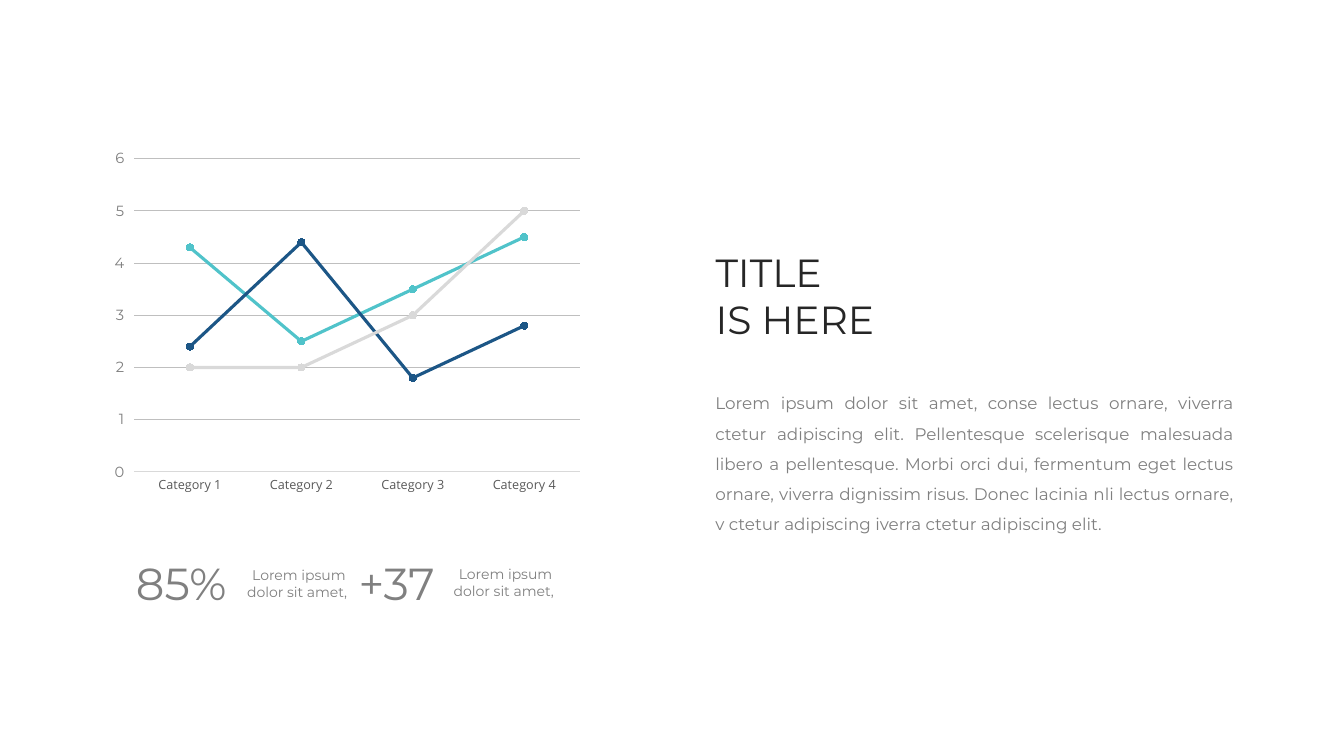
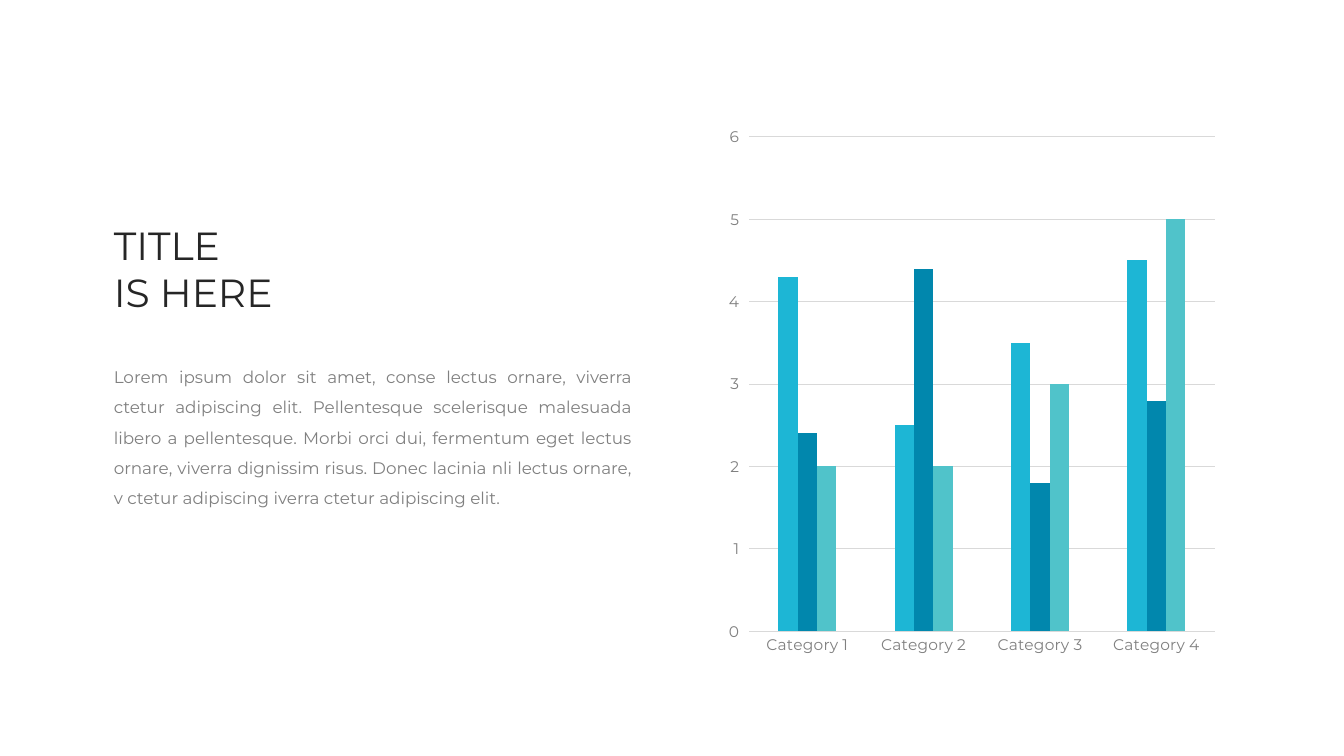
from pptx import Presentation
from pptx.chart.data import CategoryChartData
from pptx.dml.color import RGBColor
from pptx.enum import chart as ch, text as tx
from pptx.util import Pt

# Shared look
HEADING_FONT, CHART_FONT = "Montserrat", "Open Sans"
INK = RGBColor(0x26, 0x26, 0x26)
GREY = RGBColor(0x80, 0x80, 0x80)
DARK_GREY = RGBColor(0x59, 0x59, 0x59)
MID_GREY = RGBColor(0xBF, 0xBF, 0xBF)
PALE_GREY = RGBColor(0xD9, 0xD9, 0xD9)
BLACK = RGBColor(0, 0, 0)
TEAL = RGBColor(0x50, 0xC3, 0xCA)
NAVY = RGBColor(0x1C, 0x56, 0x86)
CYAN = RGBColor(0x1D, 0xB6, 0xD5)
BLUE = RGBColor(0x01, 0x87, 0xAD)

# Content
TITLE = ["TITLE", "IS HERE"]
BODY = [
    "Lorem ipsum dolor sit amet, conse lectus ornare, viverra ctetur adipiscing "
    "elit. Pellentesque scelerisque malesuada libero a pellentesque. Morbi orci "
    "dui, fermentum eget lectus ornare, viverra dignissim risus. Donec lacinia nli "
    "lectus ornare, v ctetur adipiscing iverra ctetur adipiscing elit."
]
CATEGORIES = ["Category 1", "Category 2", "Category 3", "Category 4"]
SERIES = {
    "Series 1": (4.3, 2.5, 3.5, 4.5),
    "Series 2": (2.4, 4.4, 1.8, 2.8),
    "Series 3": (2, 2, 3, 5),
}
CAPTION = ["Lorem ipsum dolor sit amet, "]
# figure, its left and width, caption left and top
STATS = [
    ("85%", 90, 87.8, 168.5, 401),
    ("+37", 249.1, 78.5, 316.1, 400.3),
]
SLIDES = [
    dict(copy_at=(504, 173.5), chart_box=(74.9, 101.5, 346.3, 256.3),
         kind=ch.XL_CHART_TYPE.LINE_MARKERS, colors=(TEAL, NAVY, PALE_GREY),
         grid=MID_GREY, value_size=10.5,
         category_style=(CHART_FONT, 9, DARK_GREY), stats=STATS),
    dict(copy_at=(74.2, 154.8), chart_box=(513.4, 82.8, 361.4, 393.1),
         kind=ch.XL_CHART_TYPE.COLUMN_CLUSTERED, colors=(CYAN, BLUE, TEAL),
         grid=PALE_GREY, value_size=11,
         category_style=(HEADING_FONT, 11, GREY), stats=[]),
]
BODY_DROP = 96.5  # from title top to body top


def set_font(font, name, size, color):
    font.name, font.size = name, Pt(size)
    font.color.rgb = color


def add_text(slide, lines, box, size, color=GREY, align=tx.PP_ALIGN.LEFT, spacing=None):
    frame = slide.shapes.add_textbox(*map(Pt, box)).text_frame
    frame.word_wrap = True
    frame.auto_size = tx.MSO_AUTO_SIZE.SHAPE_TO_FIT_TEXT
    for i, line in enumerate(lines):
        paragraph = frame.add_paragraph() if i else frame.paragraphs[0]
        paragraph.alignment = align
        if spacing:
            paragraph.line_spacing = spacing
        run = paragraph.add_run()
        run.text = line
        set_font(run.font, HEADING_FONT, size, color)


def add_chart(slide, kind, box, colors, grid, value_size, category_style):
    data = CategoryChartData()
    data.categories = CATEGORIES
    for name, values in SERIES.items():
        data.add_series(name, values)
    chart = slide.shapes.add_chart(kind, *map(Pt, box), data).chart
    chart.has_legend = chart.has_title = False
    set_font(chart.font, CHART_FONT, 9, BLACK)

    # Axes
    value_axis, category_axis = chart.value_axis, chart.category_axis
    value_axis.minimum_scale, value_axis.maximum_scale = 0, 6
    value_axis.major_unit = 1
    value_axis.format.line.fill.background()
    value_axis.major_gridlines.format.line.color.rgb = grid
    value_axis.major_gridlines.format.line.width = Pt(0.75)
    set_font(value_axis.tick_labels.font, HEADING_FONT, value_size, GREY)
    category_axis.major_tick_mark = ch.XL_TICK_MARK.NONE
    category_axis.format.line.color.rgb = PALE_GREY
    category_axis.format.line.width = Pt(0.75)
    set_font(category_axis.tick_labels.font, *category_style)

    # Series
    plot = chart.plots[0]
    plot.vary_by_categories = False
    is_line = kind == ch.XL_CHART_TYPE.LINE_MARKERS
    if not is_line:
        plot.gap_width, plot.overlap = 300, 0
    for series, color in zip(plot.series, colors):
        if is_line:
            series.smooth = False
            series.format.line.color.rgb = color
            series.format.line.width = Pt(2.25)
            series.marker.style = ch.XL_MARKER_STYLE.CIRCLE
            series.marker.size = 5
            marker = series.marker.format
            marker.fill.solid()
            marker.fill.fore_color.rgb = marker.line.color.rgb = color
        else:
            series.format.fill.solid()
            series.format.fill.fore_color.rgb = color


def main():
    deck = Presentation()
    deck.slide_width, deck.slide_height = Pt(960), Pt(540)
    for page in SLIDES:
        slide = deck.slides.add_slide(deck.slide_layouts[6])
        add_chart(slide, page["kind"], page["chart_box"], page["colors"],
                  page["grid"], page["value_size"], page["category_style"])
        # Key figures with captions
        for figure, left, width, caption_left, caption_top in page["stats"]:
            add_text(slide, [figure], (left, 393.1, width, 46), 32)
            add_text(slide, CAPTION, (caption_left, caption_top, 90, 31.5), 10,
                     align=tx.PP_ALIGN.CENTER)
        # Title and body
        left, top = page["copy_at"]
        add_text(slide, BODY, (left, top + BODY_DROP, 384.5, 113.8), 12,
                 align=tx.PP_ALIGN.JUSTIFY, spacing=1.5)
        add_text(slide, TITLE, (left, top, 169.2, 75), 28, color=INK)
    deck.save("out.pptx")


if __name__ == "__main__":
    main()
